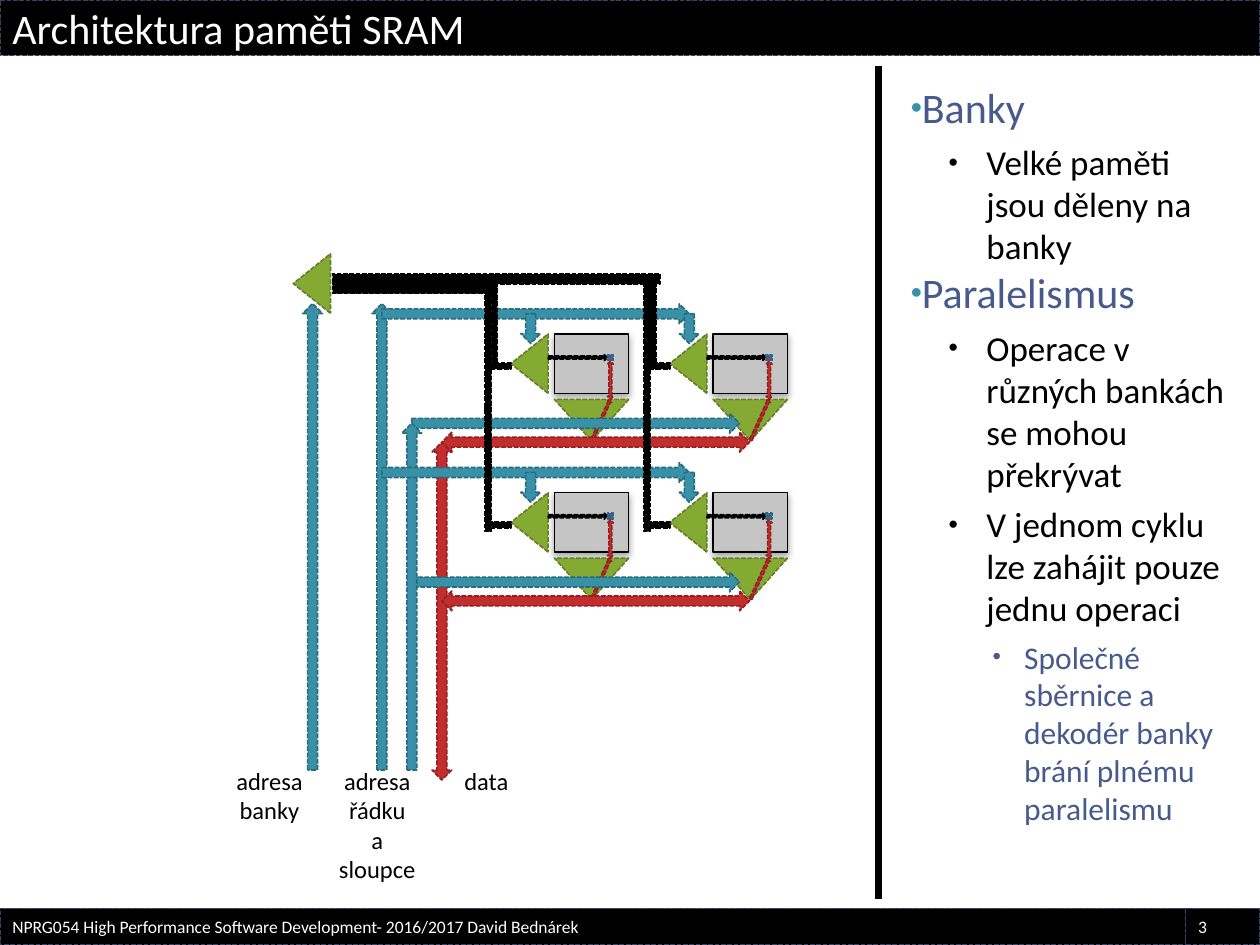
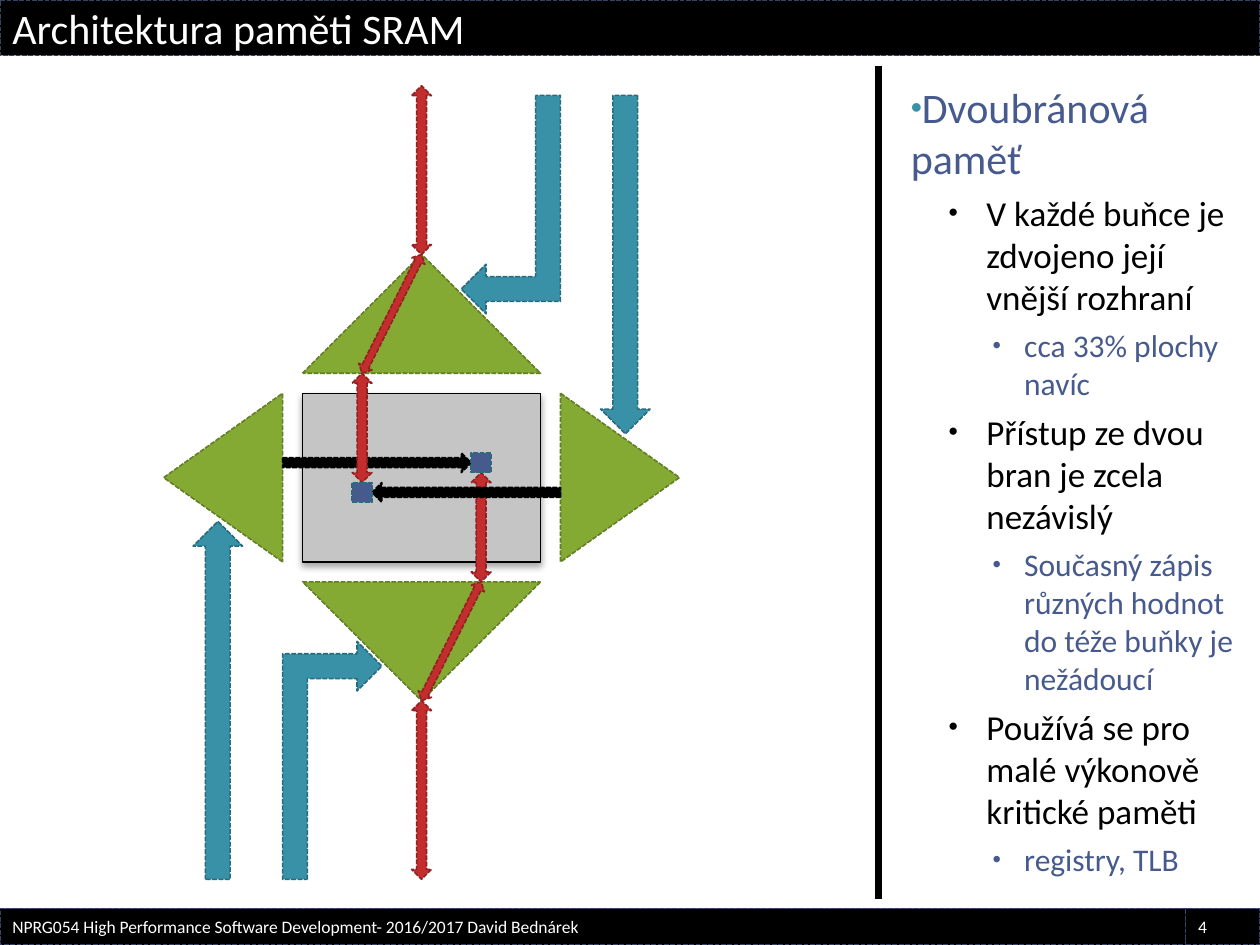
from dataclasses import dataclass
from itertools import product
from math import atan2, degrees, hypot

from lxml.etree import SubElement
from pptx import Presentation
from pptx.dml.color import RGBColor
from pptx.enum.dml import MSO_LINE
from pptx.enum.shapes import MSO_CONNECTOR, MSO_SHAPE
from pptx.enum.text import MSO_ANCHOR, PP_ALIGN
from pptx.oxml.ns import qn
from pptx.util import Pt


@dataclass(frozen=True)
class Look:
    fill: str
    line: str
    width: float = 0.9
    dashed: bool = True


@dataclass(frozen=True)
class Level:
    size: int
    color: str
    bullet: str
    margin: float
    indent: float
    before: int


@dataclass(frozen=True)
class Theme:
    font: str = "Calibri"
    black: str = "000000"
    white: str = "FFFFFF"
    title_size: int = 24
    footer_size: int = 10
    label_size: int = 14
    band: Look = Look("000000", "354368")
    array: Look = Look("C5C5C5", "000000", 0.75, False)
    decoder: Look = Look("84AA33", "627E26")
    address: Look = Look("3891A7", "296B7C")
    data: Look = Look("C32D2E", "902122")
    select: Look = Look("000000", "000000")
    cell: Look = Look("475A8D", "296B7C")
    levels: tuple = (
        Level(24, "475A8D", "3891A7", 0, 0, 0),
        Level(20, "000000", "000000", 43.2, -21.6, 5),
        Level(18, "475A8D", "475A8D", 64.8, -18, 5),
    )


THEME = Theme()
TITLE = "Architektura paměti SRAM"
COURSE = "NPRG054 High Performance Software Development- 2016/2017 David Bednárek"
PITCH = 90.7
BANK_ARRAY = (42.5, 34)
ROW_DECODER = (34, 21.3)
BUS = 11.3
WIRE = 3.5


def rgb(value):
    return RGBColor.from_string(value)


def place(shapes, kind, look, center, size, turn=0):
    (x, y), (width, height) = center, size
    item = shapes.add_shape(kind, Pt(x - width / 2), Pt(y - height / 2), Pt(width), Pt(height))
    item.rotation = turn
    item.shadow.inherit = False
    item.fill.solid()
    item.fill.fore_color.rgb = rgb(look.fill)
    item.line.color.rgb = rgb(look.line)
    item.line.width = Pt(look.width)
    if look.dashed:
        item.line.dash_style = MSO_LINE.SQUARE_DOT
    return item


def span(shapes, kind, look, start, end, thickness):
    dx, dy = end[0] - start[0], end[1] - start[1]
    center = (start[0] + dx / 2, start[1] + dy / 2)
    length, angle = hypot(dx, dy), degrees(atan2(dy, dx))
    if kind == MSO_SHAPE.UP_DOWN_ARROW:
        return place(shapes, kind, look, center, (thickness, length), (angle + 90) % 180)
    return place(shapes, kind, look, center, (length, thickness), angle % 360)


def arrow(shapes, look, start, end, thickness=BUS):
    span(shapes, MSO_SHAPE.RIGHT_ARROW, look, start, end, thickness)


def data_arrow(shapes, start, end, thickness=BUS):
    span(shapes, MSO_SHAPE.UP_DOWN_ARROW, THEME.data, start, end, thickness)


def wire(shapes, start, end, thickness=WIRE):
    span(shapes, MSO_SHAPE.RECTANGLE, THEME.select, start, end, thickness)


def decoder(shapes, center, size, turn):
    place(shapes, MSO_SHAPE.ISOSCELES_TRIANGLE, THEME.decoder, center, size, turn)


def memory_array(shapes, center, size):
    array = place(shapes, MSO_SHAPE.RECTANGLE, THEME.array, center, size)
    effects = array._element.spPr.find(qn("a:effectLst"))
    shadow = SubElement(effects, qn("a:outerShdw"), blurRad=str(Pt(4)), dist=str(Pt(2)),
                        dir="5400000", rotWithShape="0")
    color = SubElement(shadow, qn("a:srgbClr"), val=THEME.black)
    SubElement(color, qn("a:alpha"), val="35000")


def write(paragraph, text, size, color):
    run = paragraph.add_run()
    run.text = text
    run.font.name = THEME.font
    run.font.size = Pt(size)
    run.font.color.rgb = rgb(color)


def band(slide, left, top, width, height, text, size):
    center = (left + width / 2, top + height / 2)
    strip = place(slide.shapes, MSO_SHAPE.RECTANGLE, THEME.band, center, (width, height))
    strip.text_frame.vertical_anchor = MSO_ANCHOR.MIDDLE
    paragraph = strip.text_frame.paragraphs[0]
    paragraph.alignment = PP_ALIGN.LEFT
    write(paragraph, text, size, THEME.white)


def label(slide, left, width, height, lines, wrap=False):
    frame = slide.shapes.add_textbox(Pt(left), Pt(434.2), Pt(width), Pt(height)).text_frame
    frame.word_wrap = wrap
    paragraph = frame.paragraphs[0]
    paragraph.alignment = PP_ALIGN.CENTER
    for number, line in enumerate(lines):
        if number:
            paragraph.add_line_break()
        write(paragraph, line, THEME.label_size, THEME.black)


def outline(slide, points):
    frame = slide.shapes.add_textbox(Pt(513.4), Pt(43.2), Pt(199), Pt(465)).text_frame
    frame.word_wrap = True
    for number, (depth, text) in enumerate(points):
        paragraph = frame.add_paragraph() if number else frame.paragraphs[0]
        level = THEME.levels[depth]
        paragraph.level = depth
        paragraph.space_before = Pt(level.before)
        properties = paragraph._p.get_or_add_pPr()
        properties.set("marL", str(Pt(level.margin)))
        properties.set("indent", str(Pt(level.indent)))
        bullet_color = SubElement(properties, qn("a:buClr"))
        SubElement(bullet_color, qn("a:srgbClr"), val=level.bullet)
        SubElement(properties, qn("a:buSzPct"), val="76000")
        SubElement(properties, qn("a:buFont"), typeface="Arial")
        SubElement(properties, qn("a:buChar"), char="•")
        write(paragraph, text, level.size, level.color)


def new_slide(deck, number, points):
    slide = deck.slides.add_slide(deck.slide_layouts[6])
    divider = slide.shapes.add_connector(MSO_CONNECTOR.STRAIGHT, Pt(501.8), Pt(37.6), Pt(501.8), Pt(514))
    divider.line.color.rgb = rgb(THEME.black)
    divider.line.width = Pt(4)
    SubElement(divider._element.spPr, qn("a:effectLst"))
    outline(slide, points)
    band(slide, 0, 0, 720, 31.7, TITLE, THEME.title_size)
    band(slide, 677.5, 519.1, 42.5, 20.9, str(number), THEME.footer_size)
    band(slide, 0, 519.1, 677.5, 20.9, COURSE, THEME.footer_size)
    return slide


def bank(slide, left, top):
    shapes = slide.shapes.add_group_shape().shapes

    def at(x, y):
        return left + x, top + y

    memory_array(shapes, at(21.25, 17), BANK_ARRAY)
    decoder(shapes, at(-14.2, 17), ROW_DECODER, 270)
    decoder(shapes, at(21.25, 49.3), (42.5, 23.8), 180)
    arrow(shapes, THEME.select, at(-3.5, 13.5), at(30.3, 13.5), WIRE)
    data_arrow(shapes, at(32, 15.5), at(32, 37.4), WIRE)
    data_arrow(shapes, at(32, 37.4), at(21.25, 61.2), 2.8)
    place(shapes, MSO_SHAPE.RECTANGLE, THEME.cell, at(32, 13.5), (WIRE, WIRE))


def draw_banks(slide):
    shapes = slide.shapes
    steps = (0, PITCH)
    row_x, column_x, data_x, bank_x = 218.2, 235.3, 252.5, 178.6
    row_y, column_y, data_y, pins_y = 179.3, 241.9, 252.7, 440

    arrow(shapes, THEME.address, (row_x, pins_y), (row_x, 173.5))
    data_arrow(shapes, (data_x, data_y), (data_x, 445.7))
    label(slide, 184.3, 62.6, 74.9, ("adresa", "řádku", "a", "sloupce"), wrap=True)
    label(slide, 127.4, 53.3, 41, ("adresa", "banky"))
    label(slide, 257.8, 40.3, 24.5, ("data",))
    for down, across in product(steps, steps):
        bank(slide, 316.8 + across, 190.8 + down)
    for down in steps:
        data_arrow(shapes, (data_x, data_y + down), (428.3, data_y + down))
        arrow(shapes, THEME.address, (column_x, column_y + down), (422.6, column_y + down))
    arrow(shapes, THEME.address, (column_x, pins_y), (column_x, column_y))
    for down in steps:
        arrow(shapes, THEME.address, (row_x, row_y + down), (393.8, row_y + down))
        for across in steps:
            arrow(shapes, THEME.address, (303.2 + across, row_y + down), (303.2 + across, 196.3 + down))

    arrow(shapes, THEME.address, (bank_x, pins_y), (bank_x, 173.5))
    decoder(shapes, (178.2, 162), ROW_DECODER, 270)
    wire(shapes, (190.1, 159.5), (377.3, 159.5), 5.7)
    for across in steps:
        wire(shapes, (279 + across, 162), (279 + across, 303.8))
        wire(shapes, (282.5 + across, 162), (282.5 + across, 207.4))
        for down in steps:
            wire(shapes, (280.8 + across, 209.2 + down), (292.2 + across, 209.2 + down))
    wire(shapes, (190.1, 165), (280.8, 165), 5.7)


def port(shapes, center, turn, address_reach, data_reach):
    sign = -1 if turn else 1

    def at(x, y):
        return center[0] + sign * x, center[1] + sign * y

    bend_top = 93.6
    decoder(shapes, at(-113.4, 0), (96.4, 68), 270 - turn)
    decoder(shapes, at(0, 93.6), (136, 68), 180 - turn)
    arrow(shapes, THEME.address, at(-116.4, address_reach), at(-116.4, 25), 28.3)
    data_arrow(shapes, at(0, 127.5), at(0, data_reach))
    arrow(shapes, THEME.select, at(-79.4, -8.5), at(28.4, -8.5))
    data_arrow(shapes, at(34, -2.8), at(34, 59.6))
    bend = place(shapes, MSO_SHAPE.BENT_UP_ARROW, THEME.address,
                 at(-51, (bend_top + address_reach) / 2), (address_reach - bend_top, 56.7), 90 + turn)
    bend._element.spPr.find(qn("a:xfrm")).set("flipH", "1")
    data_arrow(shapes, at(34, 59.6), at(0, 127.5), 8.5)
    place(shapes, MSO_SHAPE.RECTANGLE, THEME.cell, at(34, -8.5), (BUS, BUS), turn)


def draw_dual_port(slide):
    center = (240.9, 272.9)
    memory_array(slide.shapes, center, (136, 96.4))
    port(slide.shapes, center, 0, 229.6, 229.6)
    port(slide.shapes, center, 180, 218.4, 223.9)


def main():
    deck = Presentation()
    deck.slide_width, deck.slide_height = Pt(720), Pt(540)
    draw_banks(new_slide(deck, 3, (
        (0, "Banky"),
        (1, "Velké paměti jsou děleny na banky"),
        (0, "Paralelismus"),
        (1, "Operace v různých bankách se mohou překrývat"),
        (1, "V jednom cyklu lze zahájit pouze jednu operaci"),
        (2, "Společné sběrnice a dekodér banky brání plnému paralelismu"),
    )))
    draw_dual_port(new_slide(deck, 4, (
        (0, "Dvoubránová paměť"),
        (1, "V každé buňce je zdvojeno její vnější rozhraní"),
        (2, "cca 33% plochy navíc"),
        (1, "Přístup ze dvou bran je zcela nezávislý"),
        (2, "Současný zápis různých hodnot do téže buňky je nežádoucí"),
        (1, "Používá se pro malé výkonově kritické paměti"),
        (2, "registry, TLB"),
    )))
    deck.save("out.pptx")


if __name__ == "__main__":
    main()
